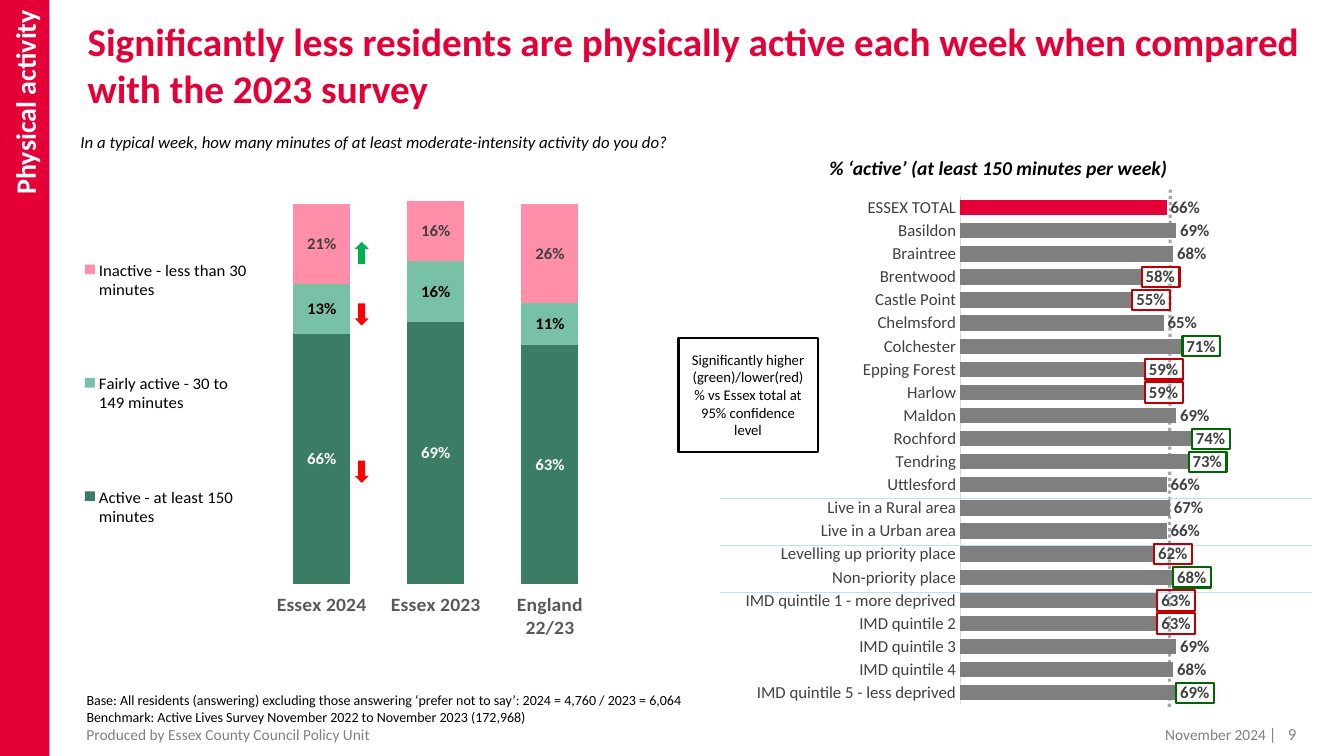
from collections import namedtuple

from lxml import etree
from pptx import Presentation
from pptx.chart.data import CategoryChartData
from pptx.dml.color import RGBColor
from pptx.enum.chart import XL_CHART_TYPE, XL_LABEL_POSITION, XL_LEGEND_POSITION, XL_TICK_MARK
from pptx.enum.dml import MSO_LINE
from pptx.enum.shapes import MSO_CONNECTOR, MSO_SHAPE
from pptx.enum.text import MSO_ANCHOR, MSO_AUTO_SIZE, PP_ALIGN
from pptx.oxml.ns import qn
from pptx.util import Pt

BAR, COLUMN = XL_CHART_TYPE.BAR_CLUSTERED, XL_CHART_TYPE.COLUMN_STACKED
OUTSIDE, CENTRE = XL_LABEL_POSITION.OUTSIDE_END, XL_LABEL_POSITION.CENTER
LEGEND_LEFT = XL_LEGEND_POSITION.LEFT
NO_TICK, TICK_OUT = XL_TICK_MARK.NONE, XL_TICK_MARK.OUTSIDE
STRAIGHT, DOTTED = MSO_CONNECTOR.STRAIGHT, MSO_LINE.ROUND_DOT
RECTANGLE, UP, DOWN = MSO_SHAPE.RECTANGLE, MSO_SHAPE.UP_ARROW, MSO_SHAPE.DOWN_ARROW
TOP, MIDDLE, NO_FIT = MSO_ANCHOR.TOP, MSO_ANCHOR.MIDDLE, MSO_AUTO_SIZE.NONE
ALIGN_LEFT, ALIGN_CENTRE, ALIGN_RIGHT = PP_ALIGN.LEFT, PP_ALIGN.CENTER, PP_ALIGN.RIGHT

FONT = "Calibri"
BLACK = RGBColor(0x00, 0x00, 0x00)
WHITE = RGBColor(0xFF, 0xFF, 0xFF)
CRIMSON = RGBColor(0xE4, 0x00, 0x37)
CHARCOAL = RGBColor(0x40, 0x40, 0x40)
AXIS_TEXT = RGBColor(0x59, 0x59, 0x59)
GREY = RGBColor(0x7F, 0x7F, 0x7F)
FOOTER_GREY = RGBColor(0x80, 0x80, 0x80)
DOT_GREY = RGBColor(0xA6, 0xA6, 0xA6)
AXIS_LINE = RGBColor(0xD9, 0xD9, 0xD9)
PALE_BLUE = RGBColor(0xBD, 0xDE, 0xFF)
ACTIVE_GREEN = RGBColor(0x3A, 0x7D, 0x64)
FAIRLY_GREEN = RGBColor(0x78, 0xC0, 0xA6)
INACTIVE_PINK = RGBColor(0xFF, 0x8E, 0xA9)
RISE_GREEN = RGBColor(0x00, 0xB0, 0x50)
FALL_RED = RGBColor(0xFF, 0x00, 0x00)
LOWER = RGBColor(0xC0, 0x00, 0x00)
HIGHER = RGBColor(0x00, 0x66, 0x00)

SURVEYS = ["Essex 2024", "Essex 2023", "England 22/23"]
LEVELS = [
    ("Active - at least 150 minutes", (0.66, 0.69, 0.63), ACTIVE_GREEN, WHITE),
    ("Fairly active - 30 to 149 minutes", (0.13, 0.16, 0.11), FAIRLY_GREEN, BLACK),
    ("Inactive - less than 30 minutes", (0.21, 0.16, 0.26), INACTIVE_PINK, CHARCOAL),
]
CHANGES = [(UP, RISE_GREEN, 82.1), (DOWN, FALL_RED, 126), (DOWN, FALL_RED, 238.4)]
AREAS = [
    ("ESSEX TOTAL", 0.66, None), ("Basildon", 0.69, None), ("Braintree", 0.68, None),
    ("Brentwood", 0.58, LOWER), ("Castle Point", 0.55, LOWER), ("Chelmsford", 0.65, None),
    ("Colchester", 0.71, HIGHER), ("Epping Forest", 0.59, LOWER), ("Harlow", 0.59, LOWER),
    ("Maldon", 0.69, None), ("Rochford", 0.74, HIGHER), ("Tendring", 0.73, HIGHER),
    ("Uttlesford", 0.66, None), ("Live in a Rural area", 0.67, None),
    ("Live in a Urban area", 0.66, None), ("Levelling up priority place", 0.62, LOWER),
    ("Non-priority place", 0.68, HIGHER), ("IMD quintile 1 - more deprived", 0.63, LOWER),
    ("IMD quintile 2", 0.63, LOWER), ("IMD quintile 3", 0.69, None),
    ("IMD quintile 4", 0.68, None), ("IMD quintile 5 - less deprived", 0.69, HIGHER),
]
AREA_PLOT = (0.488, 0.018, 0.484, 0.948)
AREA_MAXIMUM = 1.1

Box = namedtuple("Box", "left top width height")


def inside(box, left, top, width, height):
    return Box(box.left + left, box.top + top, width, height)


def in_points(box):
    return [Pt(length) for length in box]


def write(shape, text, size, colour, bold=False, italic=False, align=ALIGN_LEFT, anchor=TOP):
    frame = shape.text_frame
    frame.text = text
    frame.word_wrap = True
    frame.auto_size = NO_FIT
    frame.vertical_anchor = anchor
    para = frame.paragraphs[0]
    para.alignment = align
    font = para.font
    font.name, font.size, font.bold, font.italic = FONT, Pt(size), bold, italic
    font.color.rgb = colour


def add_text(page, box, *content, **style):
    shape = page.shapes.add_textbox(*in_points(box))
    write(shape, *content, **style)
    return shape


def add_figure(page, kind, box, fill=None, outline=None):
    shape = page.shapes.add_shape(kind, *in_points(box))
    shape.shadow.inherit = False
    if fill is None:
        shape.fill.background()
    else:
        shape.fill.solid()
        shape.fill.fore_color.rgb = fill
    if outline is None:
        shape.line.fill.background()
    else:
        shape.line.color.rgb = outline
        shape.line.width = Pt(1.5)
    return shape


def add_line(page, box, colour, width, dash=None):
    ends = (box.left, box.top, box.left + box.width, box.top + box.height)
    line = page.shapes.add_connector(STRAIGHT, *in_points(ends))
    line.line.color.rgb = colour
    line.line.width = Pt(width)
    line.line.dash_style = dash
    etree.SubElement(line.element.spPr, qn("a:effectLst"))


def set_layout(parent, index, fractions, inner=False):
    for old in parent.findall(qn("c:layout")):
        parent.remove(old)
    layout = etree.Element(qn("c:layout"))
    manual = etree.SubElement(layout, qn("c:manualLayout"))
    settings = [("layoutTarget", "inner")] if inner else []
    settings += [("xMode", "edge"), ("yMode", "edge"), *zip("xywh", fractions)]
    for name, value in settings:
        etree.SubElement(manual, qn(f"c:{name}")).set("val", str(value))
    parent.insert(index, layout)


def add_percent_chart(page, kind, box, categories, series, maximum, gap, plot_layout, position):
    data = CategoryChartData(number_format="0%")
    data.categories = categories
    for name, values, *_ in series:
        data.add_series(name, values)
    chart = page.shapes.add_chart(kind, *in_points(box), data).chart
    chart.has_title = chart.has_legend = False
    chart.font.name, chart.font.size = FONT, Pt(10)
    chart.font.color.rgb = BLACK
    axis = chart.value_axis
    axis.minimum_scale, axis.maximum_scale = 0, maximum
    axis.has_major_gridlines = axis.visible = False
    plot = chart.plots[0]
    plot.gap_width, plot.vary_by_categories = gap, False
    for item, (_, _, fill, label_colour) in zip(plot.series, series):
        item.format.fill.solid()
        item.format.fill.fore_color.rgb = fill
        labels = item.data_labels
        labels.show_value, labels.position = True, position
        labels.number_format, labels.number_format_is_linked = "0%", False
        labels.font.name, labels.font.size, labels.font.bold = FONT, Pt(12), True
        labels.font.color.rgb = label_colour
    space = chart.element.find(qn("c:chart"))
    set_layout(space.find(qn("c:plotArea")), 0, plot_layout, inner=True)
    clear = etree.Element(qn("c:spPr"))
    etree.SubElement(clear, qn("a:noFill"))
    etree.SubElement(etree.SubElement(clear, qn("a:ln")), qn("a:noFill"))
    space.addnext(clear)
    return chart


def style_categories(chart, size, colour, bold, tick):
    axis = chart.category_axis
    axis.major_tick_mark = tick
    font = axis.tick_labels.font
    font.name, font.size, font.bold = FONT, Pt(size), bold
    font.color.rgb = colour
    return axis


def build_sidebar(page, box):
    band = add_figure(page, RECTANGLE, box, CRIMSON)
    write(band, "Physical activity", 20, WHITE, bold=True, align=ALIGN_RIGHT, anchor=MIDDLE)
    frame = band.text_frame
    frame.margin_top, frame.margin_bottom = Pt(7.2), Pt(3.6)
    band.element.txBody.bodyPr.set("vert", "vert270")


def build_title(page, box):
    title = page.shapes.title
    title.left, title.top, title.width, title.height = in_points(box)
    write(title, "Significantly less residents are physically active each week when compared "
          "with the 2023 survey", 28, CRIMSON, bold=True)


def build_activity_levels(page, box):
    add_text(page, inside(box, 0, 0, 511.9, 21.6), "In a typical week, how many minutes of at "
             "least moderate-intensity activity do you do?", 12, BLACK, italic=True)
    chart = add_percent_chart(page, COLUMN, inside(box, 0.7, 29.5, 428.4, 337), SURVEYS, LEVELS,
                              1.01, 100, (0.322, 0.072, 0.571, 0.85), CENTRE)
    chart.plots[0].overlap = 100
    style_categories(chart, 14, AXIS_TEXT, True, TICK_OUT).format.line.fill.background()
    chart.has_legend = True
    legend = chart.legend
    legend.position, legend.include_in_layout = LEGEND_LEFT, False
    legend.font.name, legend.font.size = FONT, Pt(12)
    legend.font.color.rgb = BLACK
    set_layout(chart.element.find(f".//{qn('c:legend')}"), 1, (0.017, 0.04, 0.28, 0.92))
    for kind, colour, top in CHANGES:
        add_figure(page, kind, inside(box, 203, top, 10, 15.8), colour)


def build_area_comparison(page, box):
    add_line(page, inside(box, 398.1, 27.4, -0.7, 370.8), DOT_GREY, 2.25, DOTTED)
    names, values, verdicts = zip(*AREAS)
    chart_box = inside(box, 0, 25.2, 508.3, 383)
    chart = add_percent_chart(page, BAR, chart_box, names, [("Series 1", values, GREY, CHARCOAL)],
                              AREA_MAXIMUM, 50, AREA_PLOT, OUTSIDE)
    axis = style_categories(chart, 12, CHARCOAL, False, NO_TICK)
    axis.reverse_order = True
    axis.format.line.color.rgb = AXIS_LINE
    axis.format.line.width = Pt(0.75)
    total = chart.plots[0].series[0].points[0].format.fill
    total.solid()
    total.fore_color.rgb = CRIMSON
    heading = add_text(page, inside(box, 147.6, 0, 345.6, 24.5),
                       "% ‘active’ (at least 150 minutes per week)", 14, BLACK,
                       bold=True, italic=True)
    heading.text_frame.paragraphs[0].space_before = Pt(6)
    for group in range(3):
        add_line(page, inside(box, 76.3, 248.4 + 33.5 * group, 423.3, 0), PALE_BLUE, 0.75)
    key = add_figure(page, RECTANGLE, inside(box, 46.8, 133.2, 99.4, 81.4), outline=BLACK)
    write(key, "Significantly higher (green)/lower(red) % vs Essex total at 95% confidence level",
          10.5, BLACK, align=ALIGN_CENTRE, anchor=MIDDLE)
    x, y, width, height = AREA_PLOT
    row_height = height * chart_box.height / len(AREAS)
    for row, (value, verdict) in enumerate(zip(values, verdicts)):
        if verdict is not None:
            bar_end = (x + width * value / AREA_MAXIMUM) * chart_box.width
            row_top = y * chart_box.height + row * row_height
            label_box = inside(chart_box, bar_end, row_top + 1, 27, row_height - 2)
            add_figure(page, RECTANGLE, label_box, outline=verdict)


def build_footer(page, box):
    add_text(page, inside(box, 0, 0, 450, 31.7), "Base: All residents (answering) excluding those "
             "answering ‘prefer not to say’: 2024 = 4,760 / 2023 = 6,064\v"
             "Benchmark: Active Lives Survey November 2022 to November 2023 (172,968)", 10, BLACK)
    add_text(page, inside(box, 0, 28.8, 470.9, 10.8),
             "Produced by Essex County Council Policy Unit", 11, FOOTER_GREY, anchor=MIDDLE)
    add_text(page, inside(box, 684, 28.8, 172.8, 10.8), "November 2024", 11, FOOTER_GREY,
             align=ALIGN_RIGHT, anchor=MIDDLE)
    number = add_text(page, inside(box, 844.6, 23.1, 61.2, 10.8), "|\t9", 12, GREY)
    tabs = etree.Element(qn("a:tabLst"))
    etree.SubElement(tabs, qn("a:tab"), pos=str(Pt(13.5)), algn="l")
    number.element.find(f".//{qn('a:pPr')}").insert(0, tabs)


deck = Presentation()
deck.slide_width, deck.slide_height = Pt(960), Pt(540)
page = deck.slides.add_slide(deck.slide_layouts[5])
build_area_comparison(page, Box(437.8, 108, 508.3, 408.2))
build_activity_levels(page, Box(50.4, 90.7, 511.9, 366.5))
build_sidebar(page, Box(0, 0, 35.3, 540))
build_title(page, Box(55.4, 8.6, 882, 85))
build_footer(page, Box(54.7, 490.3, 905.3, 49.7))
deck.save("out.pptx")
